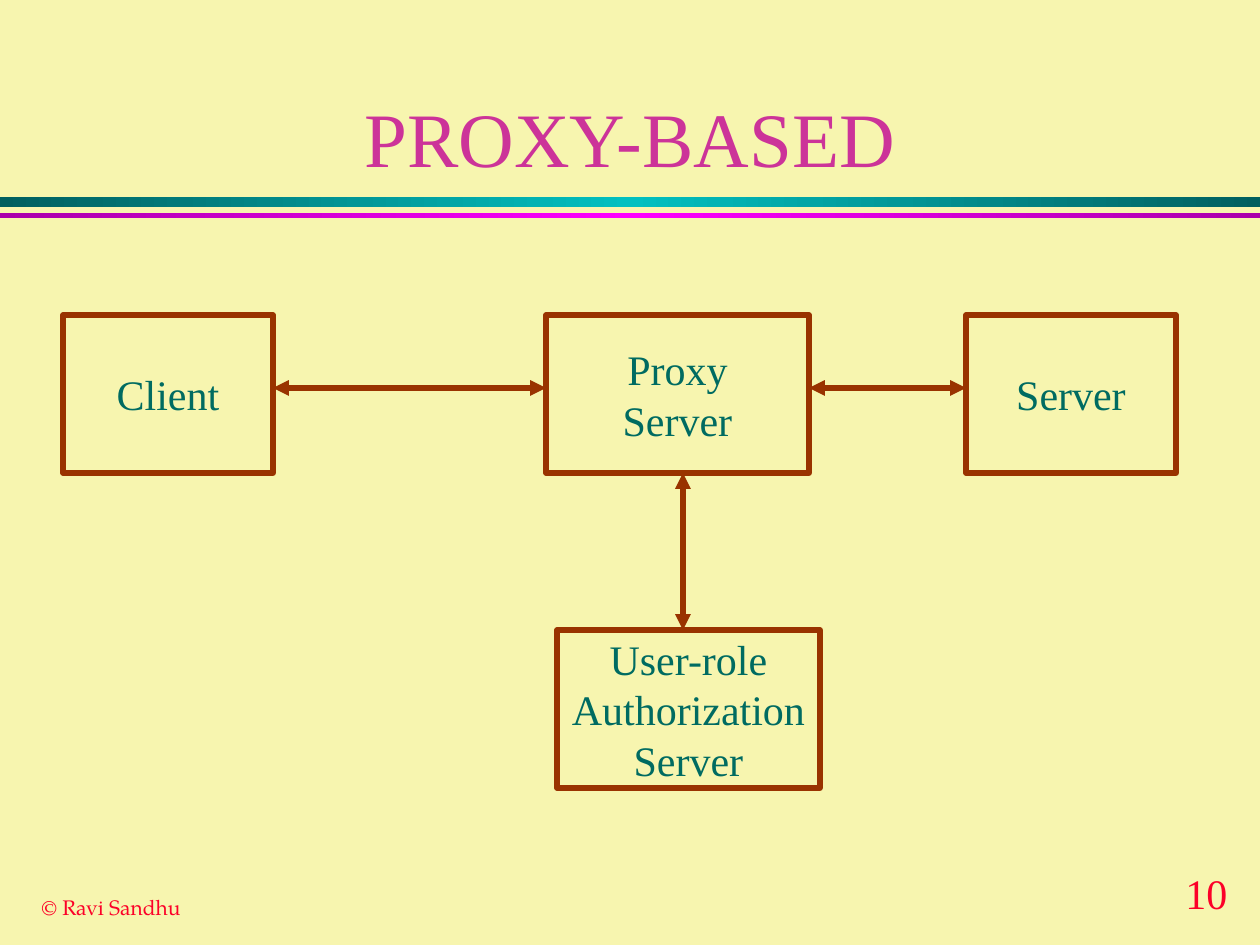
import copy

import lxml.etree
import pptx
import pptx.dml.color
import pptx.enum.shapes
import pptx.enum.text
import pptx.oxml.ns
import pptx.util

PX = 914400 / 126
WIDTH, HEIGHT = 1260, 945
COLORS = {
    "background": "F7F5AF",
    "title": "CC3399",
    "label": "006B61",
    "outline": "993300",
    "footer": "FC0128",
    "teal_edge": "005F5F",
    "teal_middle": "00C0C0",
    "magenta_edge": "AA00AA",
    "magenta_middle": "FF00FF",
}
SERIF, FOOTER_FONT = "Times New Roman", "TeX Gyre Pagella"
ALIGN = pptx.enum.text.PP_ALIGN
ANCHOR = pptx.enum.text.MSO_ANCHOR


def emu(*lengths):
    """Turn px lengths into EMU."""
    return [pptx.util.Emu(round(length * PX)) for length in lengths]


def rgb(name):
    """Return the named colour."""
    return pptx.dml.color.RGBColor.from_string(COLORS[name])


def write(shape, text, color="label", size=24, font=SERIF, align=ALIGN.CENTER,
          anchor=ANCHOR.MIDDLE, wrap=False):
    """Fill a shape with formatted text, one paragraph per line."""
    frame = shape.text_frame
    frame.text = text
    frame.word_wrap = wrap
    frame.vertical_anchor = anchor
    for paragraph in frame.paragraphs:
        paragraph.alignment = align
        for run in paragraph.runs:
            run.font.size = pptx.util.Pt(size)
            run.font.name = font
            run.font.color.rgb = rgb(color)


def add_rectangle(slide, box):
    """Add a rectangle without shadow."""
    kind = pptx.enum.shapes.MSO_SHAPE.RECTANGLE
    rectangle = slide.shapes.add_shape(kind, *emu(*box))
    rectangle.shadow.inherit = False
    return rectangle


def add_stripe(slide, box, hue):
    """Add a stripe that is brightest in its middle."""
    stripe = add_rectangle(slide, box)
    stripe.line.fill.background()
    stripe.fill.gradient()
    stripe.fill.gradient_angle = 0
    stop_list = next(stripe._element.iter(pptx.oxml.ns.qn("a:gsLst")))
    stop_list.append(copy.deepcopy(stop_list[0]))
    for stop, position, part in zip(stripe.fill.gradient_stops, (0, 0.5, 1),
                                    ("edge", "middle", "edge")):
        stop.position = position
        stop.color.rgb = rgb(f"{hue}_{part}")


def add_node(slide, box, text):
    """Add an outlined box with a centred label."""
    node = add_rectangle(slide, box)
    node.fill.background()
    node.line.color.rgb = rgb("outline")
    node.line.width = pptx.util.Pt(3)
    write(node, text)


def add_double_arrow(slide, start, end):
    """Add a straight line with an arrowhead at both ends."""
    kind = pptx.enum.shapes.MSO_CONNECTOR.STRAIGHT
    arrow = slide.shapes.add_connector(kind, *emu(*start, *end))
    arrow.line.color.rgb = rgb("outline")
    arrow.line.width = pptx.util.Pt(3)
    line = arrow.line._get_or_add_ln()
    for tag in ("a:headEnd", "a:tailEnd"):
        lxml.etree.SubElement(line, pptx.oxml.ns.qn(tag), type="triangle")
    lxml.etree.SubElement(arrow._element.spPr, pptx.oxml.ns.qn("a:effectLst"))


def add_header(slide, left, top, width):
    """Place the title and the two stripes below it."""
    title = slide.shapes.title
    title.left, title.top, title.width, title.height = emu(
        left + 94, top + 31, width - 188, 158)
    write(title, "PROXY-BASED", color="title", size=44, anchor=ANCHOR.BOTTOM,
          wrap=True)
    add_stripe(slide, (left, top + 197, width, 10), "teal")
    add_stripe(slide, (left, top + 213, width, 5), "magenta")


def add_diagram(slide, left, top):
    """Place the client, proxy and servers with their links."""
    narrow, wide, height = 210, 263, 158
    proxy, server = left + 483, left + 903
    lower_top = top + 315
    link_y, link_x = top + 73, left + 620
    add_node(slide, (left, top, narrow, height), "Client")
    add_node(slide, (proxy, top, wide, height), "Proxy\nServer")
    add_node(slide, (server, top, narrow, height), "Server")
    add_node(slide, (proxy + 11, lower_top, wide, height),
             "User-role\nAuthorization\nServer")
    add_double_arrow(slide, (left + narrow, link_y), (proxy, link_y))
    add_double_arrow(slide, (proxy + wide, link_y), (server, link_y))
    add_double_arrow(slide, (link_x, top + height), (link_x, lower_top))


def add_footer(slide, left, top):
    """Place the copyright line and the page number."""
    notes = (
        ("© Ravi Sandhu", (left, top + 27, 165, 38), 12, FOOTER_FONT),
        ("10", (left + 1144, top, 74, 63), 24, SERIF),
    )
    for text, box, size, font in notes:
        note = slide.shapes.add_textbox(*emu(*box))
        write(note, text, color="footer", size=size, font=font,
              align=ALIGN.LEFT, anchor=ANCHOR.TOP)
        note.text_frame.auto_size = pptx.enum.text.MSO_AUTO_SIZE.SHAPE_TO_FIT_TEXT


def main():
    """Build and save the slide."""
    deck = pptx.Presentation()
    deck.slide_width, deck.slide_height = emu(WIDTH, HEIGHT)
    slide = deck.slides.add_slide(deck.slide_layouts[5])
    slide.background.fill.solid()
    slide.background.fill.fore_color.rgb = rgb("background")
    add_header(slide, 0, 0, WIDTH)
    add_diagram(slide, 63, 315)
    add_footer(slide, 29, 861)
    deck.save("out.pptx")


if __name__ == "__main__":
    main()
